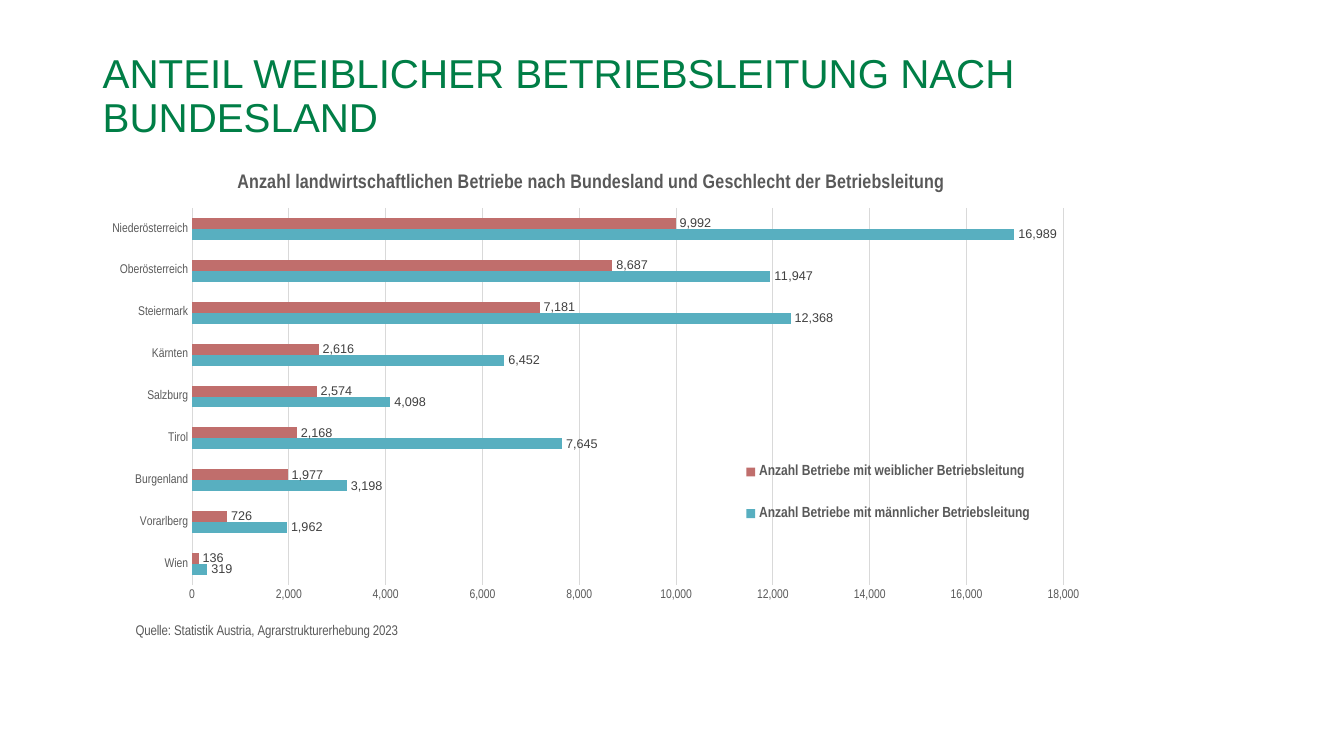
"""Build a slide with a bar chart of farm management by province and gender."""
from lxml import etree
from pptx import Presentation
from pptx.chart.data import CategoryChartData
from pptx.dml.color import RGBColor
from pptx.enum.chart import (XL_CHART_TYPE, XL_LABEL_POSITION,
                             XL_LEGEND_POSITION, XL_TICK_MARK)
from pptx.enum.text import MSO_ANCHOR
from pptx.oxml.ns import qn
from pptx.util import Inches, Pt

BAR_CLUSTERED = XL_CHART_TYPE.BAR_CLUSTERED
OUTSIDE_END = XL_LABEL_POSITION.OUTSIDE_END
BOTTOM = XL_LEGEND_POSITION.BOTTOM
NO_TICK = XL_TICK_MARK.NONE
MIDDLE = MSO_ANCHOR.MIDDLE

GREEN = RGBColor(0x00, 0x7E, 0x46)
BLACK = RGBColor(0x00, 0x00, 0x00)
GREY = RGBColor(0x59, 0x59, 0x59)
DARK_GREY = RGBColor(0x40, 0x40, 0x40)
LIGHT_GREY = RGBColor(0xD9, 0xD9, 0xD9)
TEAL = RGBColor(0x58, 0xAF, 0xC0)
ROSE = RGBColor(0xC0, 0x6E, 0x6C)

NARROW = "Arial Narrow"
THOUSANDS = "#,##0"
PROVINCES = ["Wien", "Vorarlberg", "Burgenland", "Tirol", "Salzburg",
             "Kärnten", "Steiermark", "Oberösterreich", "Niederösterreich"]
FARMS = [
    ("Anzahl Betriebe mit männlicher Betriebsleitung", TEAL,
     [319, 1962, 3198, 7645, 4098, 6452, 12368, 11947, 16989]),
    ("Anzahl Betriebe mit weiblicher Betriebsleitung", ROSE,
     [136, 726, 1977, 2168, 2574, 2616, 7181, 8687, 9992]),
]


def style_font(font, size, color=GREY, name=NARROW, bold=False):
    """Set size, colour, typeface and weight of a font."""
    font.size = Pt(size)
    font.color.rgb = color
    font.name = name
    font.bold = bold


def write_text(frame, text, line_spacing=None, **font_format):
    """Write one formatted paragraph into a text frame."""
    paragraph = frame.paragraphs[0]
    if line_spacing:
        paragraph.line_spacing = line_spacing
    run = paragraph.add_run()
    run.text = text
    style_font(run.font, **font_format)


def place(element, inner=False, **fractions):
    """Give a chart part a manual layout in fractions of the chart."""
    old = element.find(qn("c:layout"))
    if old is not None:
        element.remove(old)
    layout = etree.Element(qn("c:layout"))
    manual = etree.SubElement(layout, qn("c:manualLayout"))
    settings = [("layoutTarget", "inner")] if inner else []
    settings += [("xMode", "edge"), ("yMode", "edge")]
    settings += fractions.items()
    for tag, value in settings:
        etree.SubElement(manual, qn(f"c:{tag}")).set("val", str(value))
    before = element.find(qn("c:tx"))
    if before is None:
        before = element.find(qn("c:legendPos"))
    element.insert(0 if before is None else element.index(before) + 1, layout)


def add_heading(slide):
    """Add the slide heading."""
    frame = slide.shapes.add_textbox(
        Inches(0.92), Inches(0.72), Inches(9.99), Inches(0.49)).text_frame
    frame.word_wrap = True
    frame.vertical_anchor = MIDDLE
    write_text(frame, "ANTEIL WEIBLICHER BETRIEBSLEITUNG NACH BUNDESLAND",
               line_spacing=0.9, size=28.8, color=GREEN, name="Arial")


def style_axes(chart):
    """Format both axes, the gridlines and the source line."""
    provinces, counts = chart.category_axis, chart.value_axis
    for axis in (provinces, counts):
        axis.major_tick_mark = axis.minor_tick_mark = NO_TICK
        style_font(axis.tick_labels.font, 9)
    counts.minimum_scale, counts.maximum_scale = 0, 18000
    counts.major_unit = 2000
    counts.tick_labels.number_format = THOUSANDS
    counts.tick_labels.number_format_is_linked = False
    counts.has_major_gridlines = True
    for line in (provinces.format.line, counts.major_gridlines.format.line):
        line.color.rgb = LIGHT_GREY
        line.width = Pt(0.75)
    counts.format.line.fill.background()
    source = counts.axis_title
    write_text(source.text_frame,
               "Quelle: Statistik Austria, Agrarstrukturerhebung 2023", size=10)
    place(source._element, x=0.04, y=0.89)


def style_bars(plot):
    """Colour the bars and label them with their values."""
    plot.gap_width = 182
    plot.overlap = 0
    plot.vary_by_categories = False
    for bars, (_, color, _) in zip(plot.series, FARMS):
        bars.format.fill.solid()
        bars.format.fill.fore_color.rgb = color
        labels = bars.data_labels
        labels.show_value = True
        labels.position = OUTSIDE_END
        labels.number_format = THOUSANDS
        labels.number_format_is_linked = False
        style_font(labels.font, 9, DARK_GREY, "Arial")


def add_farm_chart(slide):
    """Add the chart of farms by province and gender."""
    data = CategoryChartData(number_format=THOUSANDS)
    data.categories = PROVINCES
    for name, _, values in FARMS:
        data.add_series(name, values)
    chart = slide.shapes.add_chart(
        BAR_CLUSTERED, Inches(0.92), Inches(1.51), Inches(9.99), Inches(5.24),
        data).chart
    style_font(chart.font, 10, BLACK, "Arial")
    write_text(chart.chart_title.text_frame,
               "Anzahl landwirtschaftlichen Betriebe nach Bundesland "
               "und Geschlecht der Betriebsleitung", size=14, bold=True)
    place(chart.chart_title._element, x=0.14, y=0.03)
    style_axes(chart)
    style_bars(chart.plots[0])
    chart.has_legend = True
    chart.legend.position = BOTTOM
    chart.legend.include_in_layout = False
    style_font(chart.legend.font, 10.5, bold=True)
    place(chart.legend._element, x=0.64, y=0.54, w=0.3, h=0.21)
    plot_area = chart._chartSpace.find(".//" + qn("c:plotArea"))
    place(plot_area, inner=True, x=0.0986, y=0.1057, w=0.865, h=0.714)


def main():
    """Create and save the slide."""
    deck = Presentation()
    deck.slide_width, deck.slide_height = Inches(13.33), Inches(7.5)
    slide = deck.slides.add_slide(deck.slide_layouts[6])
    add_heading(slide)
    add_farm_chart(slide)
    deck.save("out.pptx")


if __name__ == "__main__":
    main()
